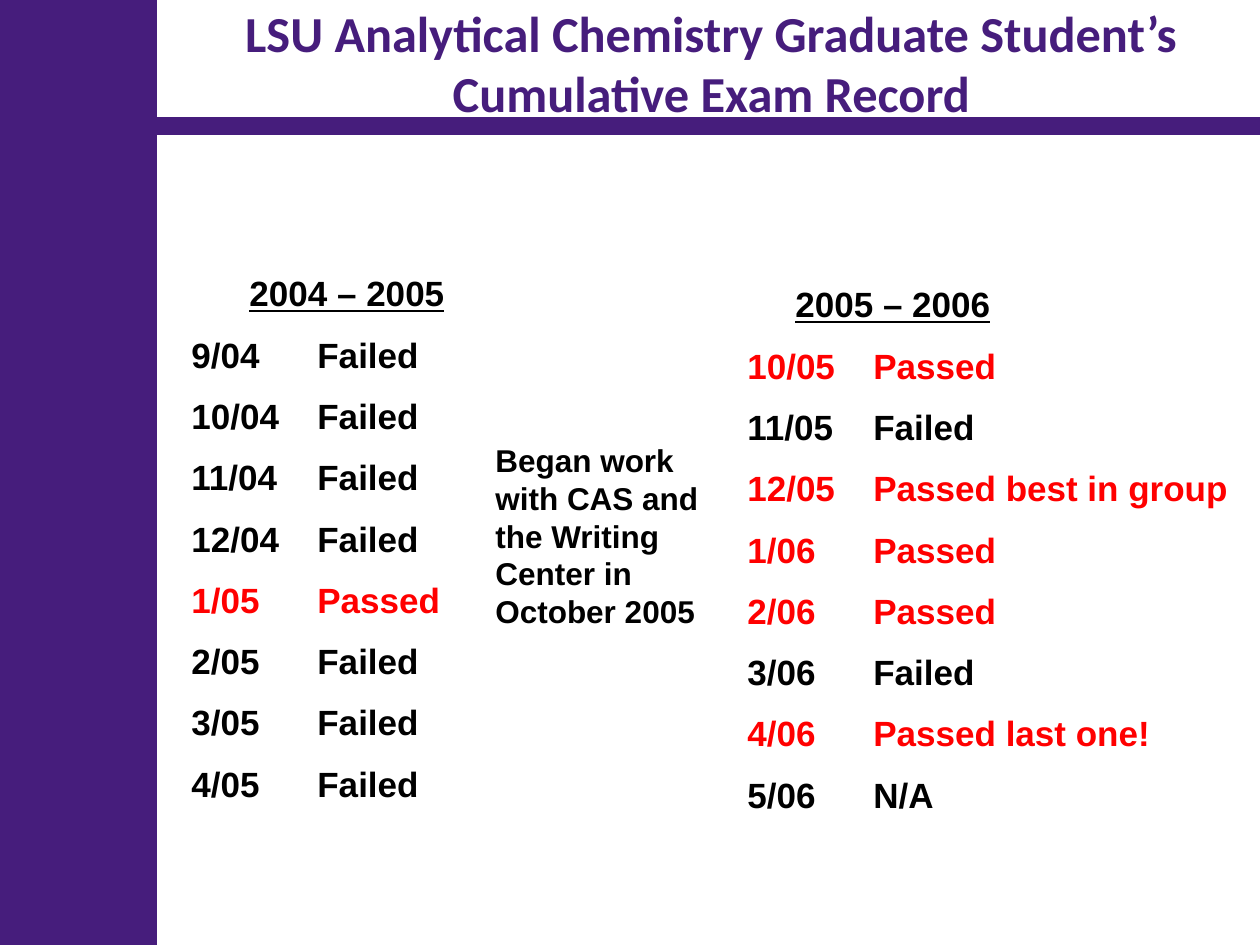
from lxml.etree import SubElement
from pptx import Presentation
from pptx.dml.color import RGBColor
from pptx.enum.shapes import MSO_CONNECTOR, MSO_SHAPE
from pptx.enum.text import MSO_ANCHOR, PP_ALIGN
from pptx.oxml.ns import qn
from pptx.util import Pt

PX = 914400 // 126  # EMU per px
COLORS = {"purple": "461D7C", "black": "000000", "red": "FF0000"}
TITLE_FONT = {"name": "Calibri", "size": Pt(28.8), "bold": True}
RECORD_FONT = {"name": "Arial", "size": Pt(20), "bold": True}
HEADING_FONT = {**RECORD_FONT, "underline": True}
NOTE_FONT = {**RECORD_FONT, "size": Pt(18)}


def write(para, text, font, color):
    span = para.add_run()
    span.text = text
    for name, value in font.items():
        setattr(span.font, name, value)
    span.font.color.rgb = RGBColor.from_string(COLORS[color])


def add_box(left, top, width, height):
    box = page.shapes.add_textbox(left * PX, top * PX, width * PX, height * PX)
    box.text_frame.word_wrap = True
    box.text_frame.margin_top = 10 * PX
    return box.text_frame


deck = Presentation()
deck.slide_width, deck.slide_height = 1260 * PX, 945 * PX
page = deck.slides.add_slide(deck.slide_layouts[5])

# Title
title = page.shapes.title
title.left, title.top, title.width, title.height = (
    n * PX for n in (176, 2, 1071, 179))
title.text_frame.vertical_anchor = MSO_ANCHOR.TOP
title.text_frame.margin_top = 0
para = title.text_frame.paragraphs[0]
para.alignment = PP_ALIGN.CENTER
write(para, "LSU Analytical Chemistry Graduate Student’s Cumulative Exam Record",
      TITLE_FONT, "purple")

# Exam records by year
years = [
    ("2004 – 2005", (179, 262, 336, 621), PP_ALIGN.CENTER, 0, [
        ("9/04", "Failed"), ("10/04", "Failed"), ("11/04", "Failed"),
        ("12/04", "Failed"), ("1/05", "Passed"), ("2/05", "Failed"),
        ("3/05", "Failed"), ("4/05", "Failed")]),
    ("2005 – 2006", (735, 273, 525, 621), PP_ALIGN.LEFT, 48, [
        ("10/05", "Passed"), ("11/05", "Failed"),
        ("12/05", "Passed best in group"), ("1/06", "Passed"),
        ("2/06", "Passed"), ("3/06", "Failed"),
        ("4/06", "Passed last one!"), ("5/06", "N/A")]),
]
for heading, place, alignment, indent, exams in years:
    frame = add_box(*place)
    para = frame.paragraphs[0]
    para.alignment = alignment
    if indent:
        para._p.get_or_add_pPr().set("marL", str(indent * PX))
    write(para, heading, HEADING_FONT, "black")
    for date, result in exams:
        para = frame.add_paragraph()
        para.space_before = Pt(11)
        tabs = SubElement(para._p.get_or_add_pPr(), qn("a:tabLst"))
        SubElement(tabs, qn("a:tab"), pos=str(126 * PX), algn="l")
        write(para, f"{date}\t{result}", RECORD_FONT,
              "red" if result.startswith("Passed") else "black")

# Note between the years
note = add_box(483, 431, 231, 204)
write(note.paragraphs[0],
      "Began work with CAS and the Writing Center in October 2005",
      NOTE_FONT, "black")

# Side band and title rule
purple = RGBColor.from_string(COLORS["purple"])
band = page.shapes.add_shape(MSO_SHAPE.RECTANGLE, 0, 0, 157 * PX, 945 * PX)
band.shadow.inherit = False
band.fill.solid()
band.fill.fore_color.rgb = purple
band.line.fill.background()

rule = page.shapes.add_connector(
    MSO_CONNECTOR.STRAIGHT, 0, 126 * PX, 1260 * PX, 126 * PX)
rule.line.color.rgb = purple
rule.line.width = Pt(10)
SubElement(rule._element.spPr, qn("a:effectLst"))

deck.save("out.pptx")
